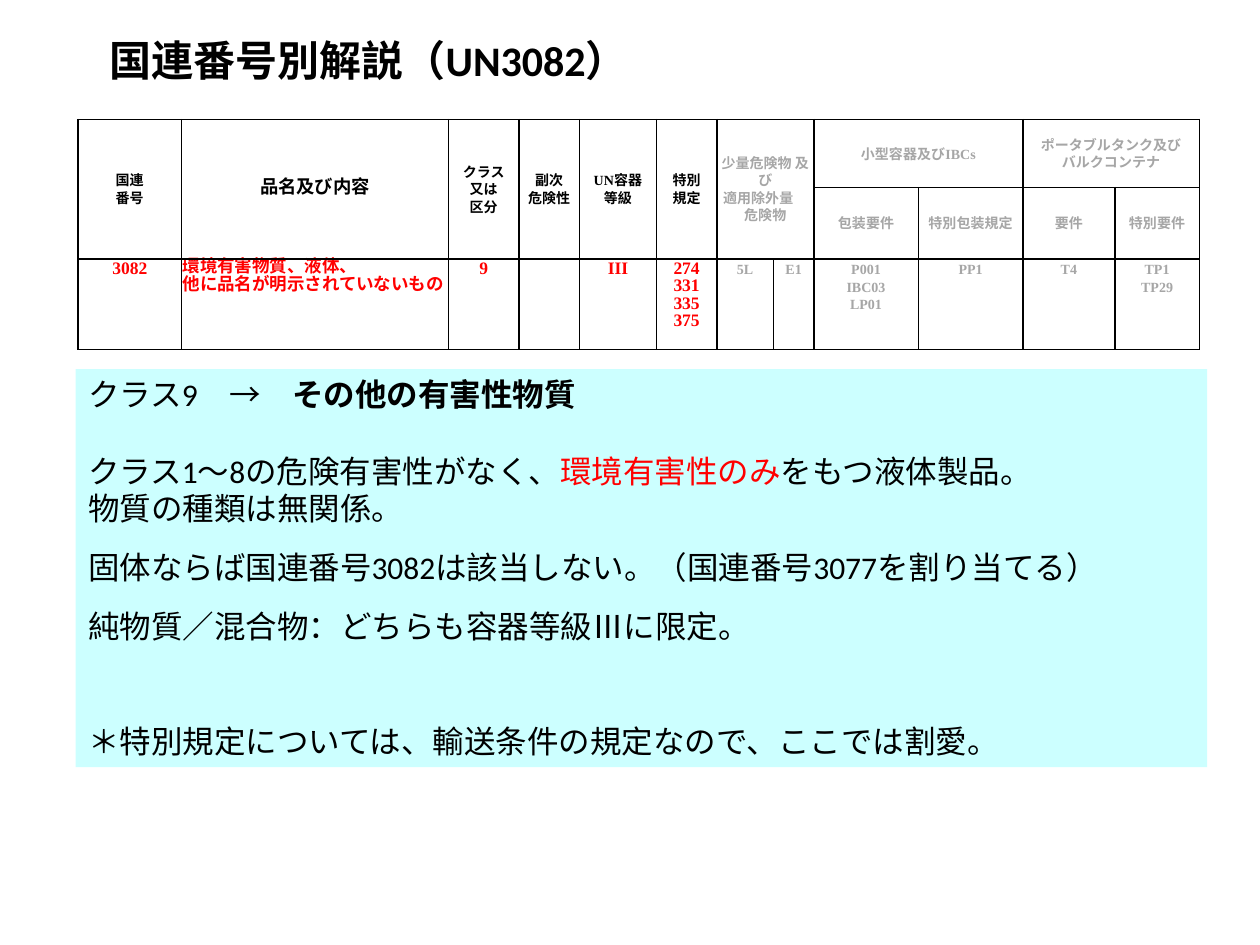
from lxml import etree
from pptx import Presentation
from pptx.dml.color import RGBColor
from pptx.enum import shapes, text
from pptx.oxml import ns
from pptx.util import Inches, Pt

BLACK, RED, GREY, PALE_CYAN = "000000", "FF0000", "A6A6A6", "CCFFFF"


def color(hex_code):
    return RGBColor.from_string(hex_code)


def style(run, name, size, hex_code, bold):
    run.font.name = name
    run.font.size = Pt(size)
    run.font.bold = bold
    run.font.color.rgb = color(hex_code)


prs = Presentation()
prs.slide_width, prs.slide_height = Inches(10), Inches(7.5)
slide = prs.slides.add_slide(prs.slide_layouts[5])

# Title
title = slide.shapes.title
title.left, title.top = Inches(0.77), Inches(0.24)
title.width, title.height = Inches(4.52), Inches(0.52)
title.text_frame.text = "国連番号別解説（UN3082）"
title.text_frame.word_wrap = False
title.text_frame.auto_size = text.MSO_AUTO_SIZE.NONE
title.text_frame.vertical_anchor = text.MSO_ANCHOR.MIDDLE
heading = title.text_frame.paragraphs[0]
heading.alignment = text.PP_ALIGN.LEFT
heading.line_spacing = 0.9
style(heading.runs[0], "Calibri", 24, BLACK, True)

# Dangerous goods list entry: \n starts a paragraph, \v breaks a line
column_widths = [0.82, 2.12, 0.56, 0.48, 0.61, 0.48, 0.45, 0.32, 0.83, 0.83, 0.73, 0.67]
row_heights = [0.54, 0.54, 0.72]
entries = [
    ["国連\n番号", "品名及び内容", "クラス\n又は\n区分", "副次\n危険性", "UN容器\n等級", "特別\n規定",
     "少量危険物 及び\n適用除外量　危険物", "", "小型容器及びIBCs", "",
     "ポータブルタンク及び\nバルクコンテナ", ""],
    [""] * 8 + ["包装要件", "特別包装規定", "要件", "特別要件"],
    ["3082", "環境有害物質、液体、\n他に品名が明示されていないもの", "9", "", "III",
     "274\v331\v335\n375", "5L", "E1", "P001\vIBC03\vLP01", "PP1", "T4", "TP1\vTP29"],
]
FIRST_GREY_COLUMN = 6
NAME_COLUMN = 1

goods = slide.shapes.add_table(3, 12, Inches(0.62), Inches(0.95),
                               Inches(8.9), Inches(1.8)).table
for column, width in zip(goods.columns, column_widths):
    column.width = Inches(width)
for row, height in zip(goods.rows, row_heights):
    row.height = Inches(height)

for r, row_entries in enumerate(entries):
    is_header = r < 2
    for c, entry in enumerate(row_entries):
        cell = goods.cell(r, c)
        cell.fill.background()
        cell.margin_left = cell.margin_right = cell.margin_top = Inches(0.01)
        cell.margin_bottom = 0
        cell.vertical_anchor = text.MSO_ANCHOR.MIDDLE if is_header else text.MSO_ANCHOR.TOP

        # Black 1 pt borders on every side
        properties = cell._tc.get_or_add_tcPr()
        for position, side in enumerate(("lnL", "lnR", "lnT", "lnB")):
            border = etree.Element(ns.qn("a:" + side), w=str(Pt(1)))
            fill = etree.SubElement(border, ns.qn("a:solidFill"))
            etree.SubElement(fill, ns.qn("a:srgbClr"), val=BLACK)
            properties.insert(position, border)

        if not entry:
            continue
        is_grey = c >= FIRST_GREY_COLUMN
        if is_header:
            size = 10.5 if c == NAME_COLUMN else 8
        else:
            size = 8 if is_grey else 10
        hex_code = GREY if is_grey else BLACK if is_header else RED
        is_name = c == NAME_COLUMN and not is_header
        cell.text_frame.text = entry
        for paragraph in cell.text_frame.paragraphs:
            paragraph.alignment = text.PP_ALIGN.LEFT if is_name else text.PP_ALIGN.CENTER
            paragraph.line_spacing = Pt(10)
            for run in paragraph.runs:
                style(run, "Times New Roman", size, hex_code, True)

name_header = goods.cell(0, NAME_COLUMN).text_frame.paragraphs[0]
name_header.space_before, name_header.space_after = Pt(2), Pt(3)

# Merged headers
for c in range(FIRST_GREY_COLUMN):
    goods.cell(0, c).merge(goods.cell(1, c))
goods.cell(0, 6).merge(goods.cell(1, 7))
for c in (8, 10):
    goods.cell(0, c).merge(goods.cell(0, c + 1))

# Explanation panel
panel = slide.shapes.add_shape(shapes.MSO_SHAPE.RECTANGLE, Inches(0.6), Inches(2.93),
                               Inches(8.98), Inches(3.16))
panel.shadow.inherit = False
panel.fill.solid()
panel.fill.fore_color.rgb = color(PALE_CYAN)
panel.line.fill.background()
explanation = panel.text_frame
explanation.word_wrap = True
explanation.vertical_anchor = text.MSO_ANCHOR.TOP

# Space before in points, then runs of text, colour and weight
remarks = [
    (0, [("クラス9　→　", BLACK, False), ("その他の有害性物質", BLACK, True)]),
    (22, [("クラス1～8の危険有害性がなく、", BLACK, False), ("環境有害性のみ", RED, False),
          ("をもつ液体製品。", BLACK, False)]),
    (0, [("物質の種類は無関係。", BLACK, False)]),
    (12, [("固体ならば国連番号3082は該当しない。（国連番号3077を割り当てる）", BLACK, False)]),
    (12, [("純物質／混合物：どちらも容器等級Ⅲに限定。", BLACK, False)]),
    (44, [("＊特別規定については、輸送条件の規定なので、ここでは割愛。", BLACK, False)]),
]
for i, (gap, parts) in enumerate(remarks):
    remark = explanation.add_paragraph() if i else explanation.paragraphs[0]
    remark.alignment = text.PP_ALIGN.LEFT
    remark.space_before = Pt(gap)
    for words, hex_code, bold in parts:
        run = remark.add_run()
        run.text = words
        style(run, "Calibri", 18, hex_code, bold)

prs.save("out.pptx")
